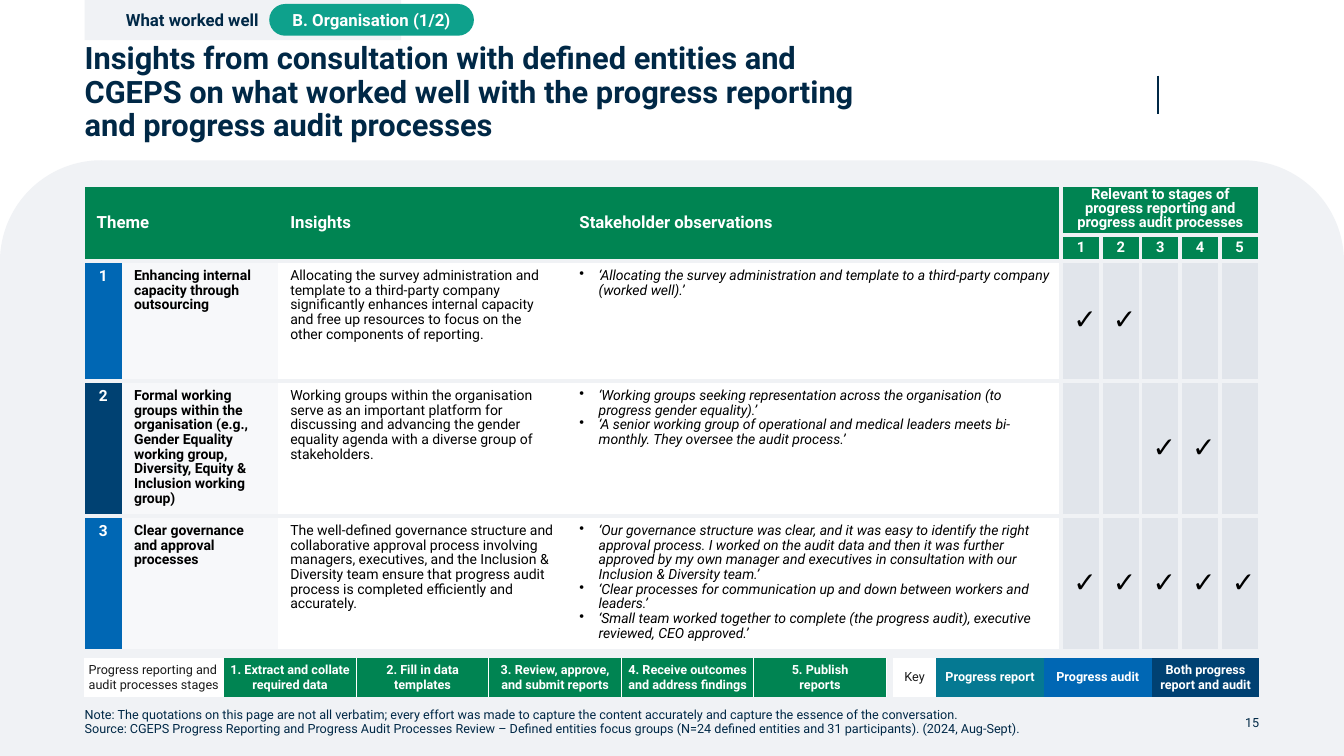
from dataclasses import dataclass, replace
from typing import Optional, Union

from lxml.etree import SubElement
from pptx import Presentation
from pptx.dml.color import RGBColor
from pptx.enum.shapes import MSO_CONNECTOR as Connector, MSO_SHAPE as Preset
from pptx.enum.text import MSO_ANCHOR as Anchor, MSO_AUTO_SIZE as AutoSize, PP_ALIGN as Align
from pptx.oxml import parse_xml
from pptx.oxml.ns import nsdecls, qn
from pptx.shapes.autoshape import Shape
from pptx.slide import Slide
from pptx.table import Table, _Cell as TableCell
from pptx.text.text import TextFrame
from pptx.util import Inches, Length, Pt

WIDTH, HEIGHT = Inches(13.33), Inches(7.5)


@dataclass(frozen=True)
class Theme:
    font: str = "Roboto"
    navy: str = "002846"
    mist: str = "F0F2F5"
    teal: str = "0EA18C"
    green: str = "008452"
    blue: str = "0067B4"
    deep: str = "004172"
    petrol: str = "057992"
    grey: str = "E1E5EB"
    white: str = "FFFFFF"
    black: str = "000000"
    ink: str = "1A1A1A"
    title: float = 22
    tick: float = 20
    label: float = 12
    number: float = 11
    stage: float = 10.5
    body: float = 10
    small: float = 9


@dataclass(frozen=True)
class Style:
    size: float
    color: str
    bold: bool = False
    italic: bool = False
    align: Align = Align.LEFT
    anchor: Anchor = Anchor.MIDDLE
    spacing: Union[float, Length] = 0.9
    indent: float = 0
    bullet: bool = False


@dataclass(frozen=True)
class Box:
    left: float
    top: float
    width: float
    height: float

    def place(self) -> tuple[Length, Length, Length, Length]:
        return across(self.left), down(self.top), across(self.width), down(self.height)


@dataclass(frozen=True)
class Insight:
    theme: str
    insight: str
    quotes: list[str]
    stages: set[int]
    fill: str


@dataclass(frozen=True)
class Stage:
    label: str
    fill: str
    style: Style


def across(share: float) -> Length:
    return Length(round(WIDTH * share / 100))


def down(share: float) -> Length:
    return Length(round(HEIGHT * share / 100))


THEME = Theme()
TITLE = Style(THEME.title, THEME.navy, bold=True)
NOTE = Style(THEME.small, THEME.navy)
TAB = Style(THEME.label, THEME.navy, bold=True, spacing=1.0, indent=2.33)
PILL = replace(TAB, color=THEME.white, align=Align.CENTER, indent=0)
HEADER = Style(THEME.label, THEME.white, bold=True)
STAGE = replace(HEADER, size=THEME.stage, align=Align.CENTER)
NUMBER = replace(STAGE, size=THEME.number, anchor=Anchor.TOP)
BODY = Style(THEME.body, THEME.black, anchor=Anchor.TOP)
QUOTE = replace(BODY, italic=True, indent=1.43, bullet=True)
TICK = Style(THEME.tick, THEME.black, italic=True, align=Align.CENTER)
PLAIN = Style(THEME.small, THEME.ink, spacing=1.0)
STEP = replace(PLAIN, color=THEME.white, bold=True, align=Align.CENTER)

LEFT, SPAN, LEGEND_TOP, LEGEND_HEIGHT = 6.3, 87.4, 87.07, 5.07
FOOT_TOP, FOOT_HEIGHT = 93.73, 3.73
STAGES = range(1, 6)
FIRST_STAGE = 4
NO_INSET, HEAD_INSET = (0, 0), (0.9, 0.53)
ROW_INSET, LEGEND_INSET = (0.9, 1.07), (0.3, 0.53)

INSIGHTS = [
    Insight("Enhancing internal capacity through outsourcing",
            "Allocating the survey administration and template to a third-party company significantly enhances internal capacity and free up resources to focus on the other components of reporting.",
            ["‘Allocating the survey administration and template to a third-party company (worked well).’"],
            {1, 2}, THEME.blue),
    Insight("Formal working groups within the organisation (e.g., Gender Equality working group, Diversity, Equity & Inclusion working group)",
            "Working groups within the organisation serve as an important platform for discussing and advancing the gender equality agenda with a diverse group of stakeholders.",
            ["‘Working groups seeking representation across the organisation (to progress gender equality).’",
             "‘A senior working group of operational and medical leaders meets bi-monthly. They oversee the audit process.’"],
            {3, 4}, THEME.deep),
    Insight("Clear governance and approval processes",
            "The well-defined governance structure and collaborative approval process involving managers, executives, and the Inclusion & Diversity team ensure that progress audit process is completed efficiently and accurately.",
            ["‘Our governance structure was clear, and it was easy to identify the right approval process. I worked on the audit data and then it was further approved by my own manager and executives in consultation with our Inclusion & Diversity team.’",
             "‘Clear processes for communication up and down between workers and leaders.’",
             "‘Small team worked together to complete (the progress audit), executive reviewed, CEO approved.’"],
            set(STAGES), THEME.blue),
]
STEPS = [Stage("Progress reporting and audit processes stages", THEME.white, PLAIN)] + [
    Stage(label, THEME.green, STEP) for label in (
        "1. Extract and collate required data", "2. Fill in data\ntemplates",
        "3. Review, approve, and submit reports",
        "4. Receive outcomes and address findings", "5. Publish\vreports")]
KEYS = [Stage("Key", THEME.white, replace(PLAIN, align=Align.CENTER)),
        Stage("Progress report", THEME.petrol, STEP),
        Stage("Progress audit", THEME.blue, STEP),
        Stage("Both progress report and audit", THEME.deep, STEP)]


def write(frame: TextFrame, texts: list[str], style: Style) -> None:
    for index, text in enumerate(texts):
        para = frame.add_paragraph() if index else frame.paragraphs[0]
        settings = para._p.get_or_add_pPr()
        settings.set("marL", str(across(style.indent)))
        settings.set("indent", str(-across(style.indent) if style.bullet else 0))
        if style.bullet:
            SubElement(settings, qn("a:buChar")).set("char", "•")
        else:
            SubElement(settings, qn("a:buNone"))
        para.alignment, para.line_spacing = style.align, style.spacing
        para.space_before = Pt(0)
        for index_line, line in enumerate(text.split("\v")):
            if index_line:
                para.add_line_break()
            span = para.add_run()
            span.text = line
            span.font.name, span.font.size = THEME.font, Pt(style.size)
            span.font.bold, span.font.italic = style.bold, style.italic
            span.font.color.rgb = RGBColor.from_string(style.color)


def write_box(box: Shape, text: str, style: Style, inset: Optional[tuple[float, float]] = NO_INSET) -> None:
    frame = box.text_frame
    frame.word_wrap, frame.auto_size = True, AutoSize.NONE
    frame.vertical_anchor = style.anchor
    if inset:
        frame.margin_left = frame.margin_right = across(inset[0])
        frame.margin_top = frame.margin_bottom = down(inset[1])
    write(frame, [text], style)


def add_block(page: Slide, preset: Preset, box: Box, fill: str, corners: tuple[float, ...] = ()) -> Shape:
    block = page.shapes.add_shape(preset, *box.place())
    block.shadow.inherit = False
    block.fill.solid()
    block.fill.fore_color.rgb = RGBColor.from_string(fill)
    block.line.fill.background()
    for index, corner in enumerate(corners):
        block.adjustments[index] = corner
    return block


def add_grid(page: Slide, left: float, top: float, columns: list[float], rows: list[float]) -> Table:
    box = Box(left, top, sum(columns), sum(rows))
    table = page.shapes.add_table(len(rows), len(columns), *box.place()).table
    table.first_row = table.horz_banding = False
    for column, share in zip(table.columns, columns):
        column.width = across(share)
    for row, share in zip(table.rows, rows):
        row.height = down(share)
    return table


def fill_cell(cell: TableCell, texts: list[str], style: Style, fill: str, inset: tuple[float, float],
              alpha: int = 100) -> None:
    cell.fill.solid()
    cell.fill.fore_color.rgb = RGBColor.from_string(fill)
    if alpha < 100:
        tint = cell._tc.tcPr.find(qn("a:solidFill"))[0]
        SubElement(tint, qn("a:alpha")).set("val", str(alpha * 1000))
    cell.vertical_anchor = style.anchor
    cell.margin_left = cell.margin_right = across(inset[0])
    cell.margin_top = cell.margin_bottom = down(inset[1])
    write(cell.text_frame, texts, style)


def rule_cell(cell: TableCell, sides: str, color: str, points: float) -> None:
    for index, side in enumerate("LRTB"):
        paint = f'<a:solidFill><a:srgbClr val="{color}"/></a:solidFill>' if side in sides else "<a:noFill/>"
        cell._tc.get_or_add_tcPr().insert(
            index, parse_xml(f'<a:ln{side} {nsdecls("a")} w="{Pt(points)}">{paint}</a:ln{side}>'))


def add_insights(page: Slide) -> None:
    table = add_grid(page, LEFT, 24.47, [2.78, 11.62, 21.52, 36.75] + [2.95] * len(STAGES),
                     [6.6, 3.4, 15.87, 17.87, 17.87])
    last = FIRST_STAGE + len(STAGES) - 1
    for first, final in (((0, 0), (1, 1)), ((0, 2), (1, 2)), ((0, 3), (1, 3)), ((0, FIRST_STAGE), (0, last))):
        table.cell(*first).merge(table.cell(*final))
    for column, label in ((0, "Theme"), (2, "Insights"), (3, "Stakeholder observations")):
        fill_cell(table.cell(0, column), [label], HEADER, THEME.green, HEAD_INSET)
    fill_cell(table.cell(0, FIRST_STAGE), ["Relevant to stages of progress reporting and progress audit processes"],
              replace(STAGE, spacing=Pt(10)), THEME.green, HEAD_INSET)
    for column, stage in enumerate(STAGES, FIRST_STAGE):
        fill_cell(table.cell(1, column), [str(stage)], STAGE, THEME.green, HEAD_INSET)
    for row, item in enumerate(INSIGHTS, 2):
        fill_cell(table.cell(row, 0), [str(row - 1)], NUMBER, item.fill, ROW_INSET)
        fill_cell(table.cell(row, 1), [item.theme], replace(BODY, bold=True), THEME.white, ROW_INSET, 50)
        fill_cell(table.cell(row, 2), [item.insight], BODY, THEME.white, ROW_INSET)
        fill_cell(table.cell(row, 3), item.quotes, QUOTE, THEME.white, ROW_INSET)
        for column, stage in enumerate(STAGES, FIRST_STAGE):
            fill_cell(table.cell(row, column), ["✓"] if stage in item.stages else [], TICK, THEME.grey, ROW_INSET)
    for row in range(len(table.rows)):
        for column in range(len(table.columns)):
            cell = table.cell(row, column)
            if not cell.is_spanned:
                sides = "TB" + "L" * (column >= FIRST_STAGE) + "R" * (column >= FIRST_STAGE - 1)
                rule_cell(cell, sides, THEME.mist, 3)


def add_legend(page: Slide, left: float, columns: list[float], stages: list[Stage], sides: str) -> None:
    table = add_grid(page, left, LEGEND_TOP, columns, [LEGEND_HEIGHT])
    for column, stage in enumerate(stages):
        cell = table.cell(0, column)
        fill_cell(cell, stage.label.split("\n"), stage.style, stage.fill, LEGEND_INSET)
        rule_cell(cell, sides, THEME.white, 0.5)


def main() -> None:
    deck = Presentation()
    deck.slide_width, deck.slide_height = WIDTH, HEIGHT
    page = deck.slides.add_slide(deck.slide_layouts[1])
    panel = add_block(page, Preset.ROUND_2_SAME_RECTANGLE, Box(0, 21.2, 100, 78.8), THEME.mist, (0.17, 0))
    panel.element.getparent().insert(2, panel.element)
    divider = page.shapes.add_connector(Connector.STRAIGHT, across(86.18), down(10), across(86.18), down(15.07))
    divider.line.color.rgb, divider.line.width = RGBColor.from_string(THEME.navy), Pt(1.5)
    SubElement(divider.element.spPr, qn("a:effectLst"))
    title, note = page.shapes.title, page.placeholders[1]
    for holder, box in ((title, Box(LEFT, 6.53, 59.03, 11.6)), (note, Box(LEFT, FOOT_TOP, 79.73, FOOT_HEIGHT))):
        holder.left, holder.top, holder.width, holder.height = box.place()
    write_box(title, "Insights from consultation with defined entities and CGEPS on what worked well with the progress reporting and progress audit processes", TITLE)
    write_box(note, "Note: The quotations on this page are not all verbatim; every effort was made to capture the content accurately and capture the essence of the conversation.\vSource: CGEPS Progress Reporting and Progress Audit Processes Review – Defined entities focus groups (N=24 defined entities and 31 participants). (2024, Aug-Sept).", NOTE)
    tab = add_block(page, Preset.RECTANGLE, Box(LEFT, 0, 23.55, 5.33), THEME.mist)
    write_box(tab, "What worked well", TAB, None)
    pill = add_block(page, Preset.ROUNDED_RECTANGLE, Box(20.03, 0.53, 15.23, 4.2), THEME.teal, (0.5,))
    write_box(pill, "B. Organisation (1/2)", PILL, None)
    add_insights(page)
    add_legend(page, 66.45, [3.2] + [8.02] * 3, KEYS, "")
    add_legend(page, LEFT, [10.35] + [9.86] * len(STAGES), STEPS, "LR")
    number = page.shapes.add_textbox(*Box(LEFT + SPAN - 5.9, FOOT_TOP, 5.9, FOOT_HEIGHT).place())
    write_box(number, "15", replace(NOTE, align=Align.RIGHT, spacing=1.0))
    deck.save("out.pptx")


if __name__ == "__main__":
    main()
